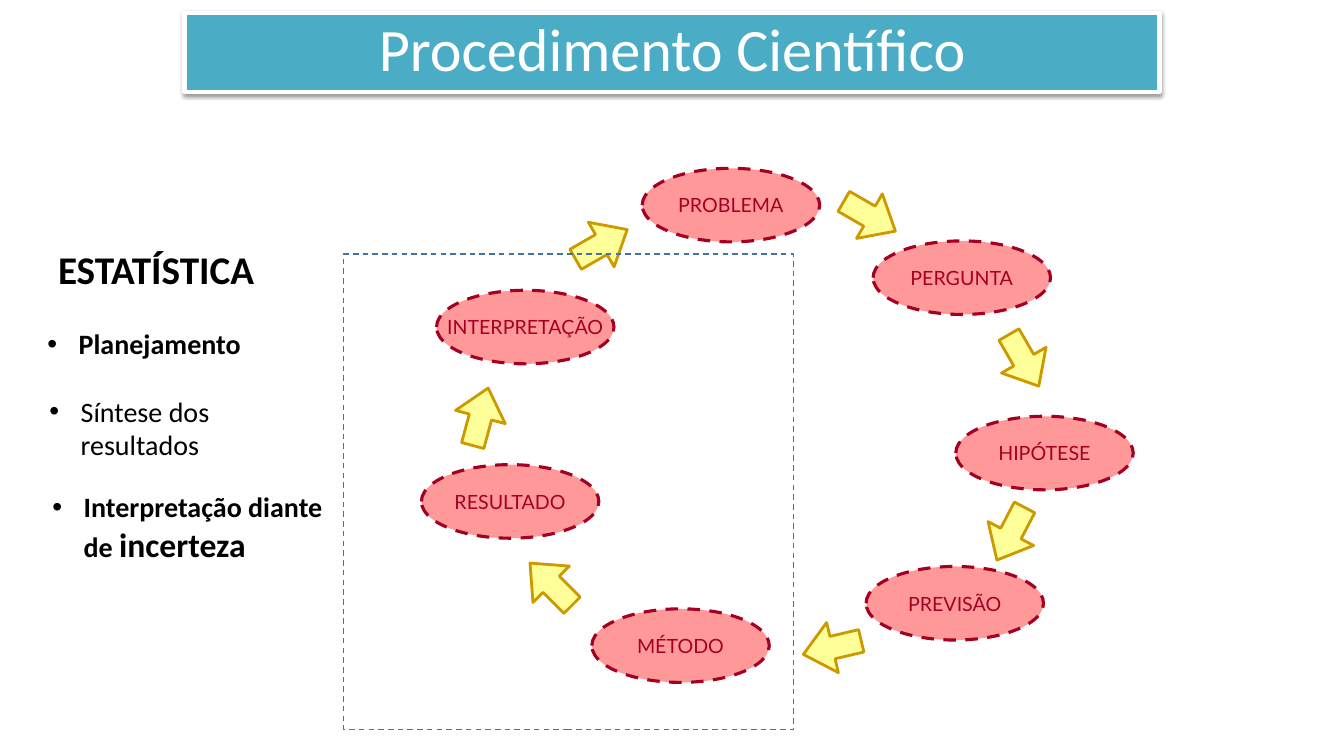
import dataclasses
import typing

import lxml.etree
import pptx
import pptx.dml.color
import pptx.enum.dml
import pptx.enum.shapes
import pptx.enum.text
import pptx.oxml
import pptx.oxml.ns
import pptx.util

CELL = 0.1  # inches per grid column or row
SHAPES = pptx.enum.shapes.MSO_SHAPE
ALIGN = pptx.enum.text.PP_ALIGN
ANCHOR = pptx.enum.text.MSO_ANCHOR
DASH = pptx.enum.dml.MSO_LINE.DASH


@dataclasses.dataclass(frozen=True)
class Theme:
    text_font: str = "Calibri"
    step_font: str = "Lato"
    black: str = "000000"
    white: str = "FFFFFF"
    banner: str = "4BACC6"
    step_fill: str = "FF9999"
    step_line: str = "A50021"
    arrow_fill: str = "FFFF99"
    arrow_line: str = "CC9900"
    frame_line: str = "43739E"
    title_size: float = 43
    heading_size: float = 28
    emphasis_size: float = 24
    list_size: float = 20
    step_size: float = 14


THEME = Theme()


class Box(typing.NamedTuple):
    """A region in grid columns and rows."""
    left: float
    top: float
    width: float
    height: float

    def inner(self, column, row, width, height):
        return Box(self.left + column, self.top + row, width, height)


BANNER = Box(18.3, 1.3, 96.7, 7.8)
STATISTICS = Box(3.7, 23.8, 30.1, 32.7)
CYCLE = Box(41.8, 16.7, 70.6, 51)
FRAME = Box(34.1, 25.2, 44.6, 47.2)

STEP_SIZE = (17.6, 7.3)
ARROW_SIZE = (5.1, 5.9)

# label, step column and row, then column, row and rotation of the next arrow
STEPS = [
    ("PROBLEMA", (21.9, 0), (41.9, 1.8), 300),
    ("PERGUNTA", (44.8, 7.2), (57.2, 16.1), 330),
    ("HIPÓTESE", (53, 24.6), (55.9, 33.3), 27.7),
    ("PREVISÃO", (44.1, 39.5), (38.2, 44.6), 76.8),
    ("MÉTODO", (16.9, 43.7), (10.3, 38.3), 135),
    ("RESULTADO", (0, 29.4), (3.3, 21.7), 195),
    ("INTERPRETAÇÃO", (1.5, 12.1), (15.3, 4.6), 240),
]

# placeholder index, place in the region, and runs of text, size and bold
BULLETS = [
    (2, (0, 8.1, 24.5, 4.4), [("Planejamento", THEME.list_size, True)]),
    (3, (0.2, 14.8, 29.9, 7.7),
     [("Síntese dos resultados", THEME.list_size, False)]),
    (4, (0.5, 24.3, 29.9, 8.4),
     [("Interpretação diante de ", THEME.list_size, True),
      ("incerteza", THEME.emphasis_size, True)]),
]


def color(value):
    return pptx.dml.color.RGBColor.from_string(value)


def lengths(box):
    return [pptx.util.Inches(cells * CELL) for cells in box]


def apply(target, values):
    for name, value in values.items():
        setattr(target, name, value)


def paint(shape, fill, line, width, dash=None):
    if fill:
        shape.fill.solid()
        shape.fill.fore_color.rgb = color(fill)
    else:
        shape.fill.background()
    shape.line.color.rgb = color(line)
    apply(shape.line, {"width": pptx.util.Pt(width), "dash_style": dash})


def add_run(paragraph, text, size, font_color, name=THEME.text_font, bold=False):
    run = paragraph.add_run()
    run.text = text
    apply(run.font, {"name": name, "size": pptx.util.Pt(size), "bold": bold})
    run.font.color.rgb = color(font_color)


def place_text(shape, box, anchor, alignment, line_spacing=1.0):
    """Move a placeholder and return its formatted first paragraph."""
    apply(shape, dict(zip(("left", "top", "width", "height"), lengths(box))))
    apply(shape.text_frame, {
        "word_wrap": True,
        "auto_size": pptx.enum.text.MSO_AUTO_SIZE.NONE,
        "vertical_anchor": anchor,
    })
    paragraph = shape.text_frame.paragraphs[0]
    apply(paragraph, {"alignment": alignment, "line_spacing": line_spacing,
                      "space_before": pptx.util.Pt(0)})
    return paragraph


def set_bullet(paragraph):
    properties = paragraph._p.get_or_add_pPr()
    indent = pptx.util.Inches(0.31)
    properties.set("marL", str(indent))
    properties.set("indent", str(-indent))
    for tag, name, value in (("a:buFont", "typeface", "Arial"),
                             ("a:buChar", "char", "•")):
        bullet = lxml.etree.SubElement(properties, pptx.oxml.ns.qn(tag))
        bullet.set(name, value)


def add_shadow(shape):
    shape._element.spPr.append(pptx.oxml.parse_xml(
        f'<a:effectLst {pptx.oxml.ns.nsdecls("a")}>'
        f'<a:outerShdw blurRad="{pptx.util.Pt(3.1)}" dist="{pptx.util.Pt(1.6)}"'
        ' dir="5400000" rotWithShape="0">'
        f'<a:srgbClr val="{THEME.black}"><a:alpha val="38000"/></a:srgbClr>'
        '</a:outerShdw></a:effectLst>'))


def build_banner(slide, box):
    title = slide.shapes.title
    paragraph = place_text(title, box, ANCHOR.MIDDLE, ALIGN.CENTER, 0.9)
    add_run(paragraph, "Procedimento Científico", THEME.title_size, THEME.white)
    paint(title, THEME.banner, THEME.white, 3)
    add_shadow(title)


def build_statistics(slide, box):
    placeholders = {item.placeholder_format.idx: item for item in slide.placeholders}
    heading = place_text(placeholders[1], box.inner(0, 0, 22.5, 5.7),
                         ANCHOR.TOP, ALIGN.RIGHT)
    add_run(heading, "ESTATÍSTICA", THEME.heading_size, THEME.black, bold=True)
    for index, place, runs in BULLETS:
        paragraph = place_text(placeholders[index], box.inner(*place),
                               ANCHOR.TOP, ALIGN.LEFT)
        set_bullet(paragraph)
        for text, size, bold in runs:
            add_run(paragraph, text, size, THEME.black, bold=bold)


def add_preset(shapes, preset, box):
    shape = shapes.add_shape(preset, *lengths(box))
    shape.shadow.inherit = False
    return shape


def build_cycle(slide, box):
    shapes = slide.shapes.add_group_shape().shapes
    for label, step_place, arrow_place, rotation in STEPS:
        step = add_preset(shapes, SHAPES.OVAL, box.inner(*step_place, *STEP_SIZE))
        paint(step, THEME.step_fill, THEME.step_line, 2.25, DASH)
        apply(step.text_frame, {"word_wrap": False,
                                "vertical_anchor": ANCHOR.MIDDLE})
        paragraph = step.text_frame.paragraphs[0]
        paragraph.alignment = ALIGN.CENTER
        add_run(paragraph, label, THEME.step_size, THEME.step_line, THEME.step_font)

        arrow = add_preset(shapes, SHAPES.DOWN_ARROW,
                           box.inner(*arrow_place, *ARROW_SIZE))
        paint(arrow, THEME.arrow_fill, THEME.arrow_line, 2)
        arrow.rotation = rotation
        arrow.adjustments[0], arrow.adjustments[1] = 0.448, 0.583


def build_frame(slide, box):
    frame = add_preset(slide.shapes, SHAPES.RECTANGLE, box)
    paint(frame, None, THEME.frame_line, 1, DASH)


def main():
    presentation = pptx.Presentation()
    apply(presentation, {"slide_width": pptx.util.Inches(13.33),
                         "slide_height": pptx.util.Inches(7.5)})
    comparison_layout = presentation.slide_layouts[4]
    slide = presentation.slides.add_slide(comparison_layout)
    build_banner(slide, BANNER)
    build_statistics(slide, STATISTICS)
    build_cycle(slide, CYCLE)
    build_frame(slide, FRAME)
    presentation.save("out.pptx")


if __name__ == "__main__":
    main()
